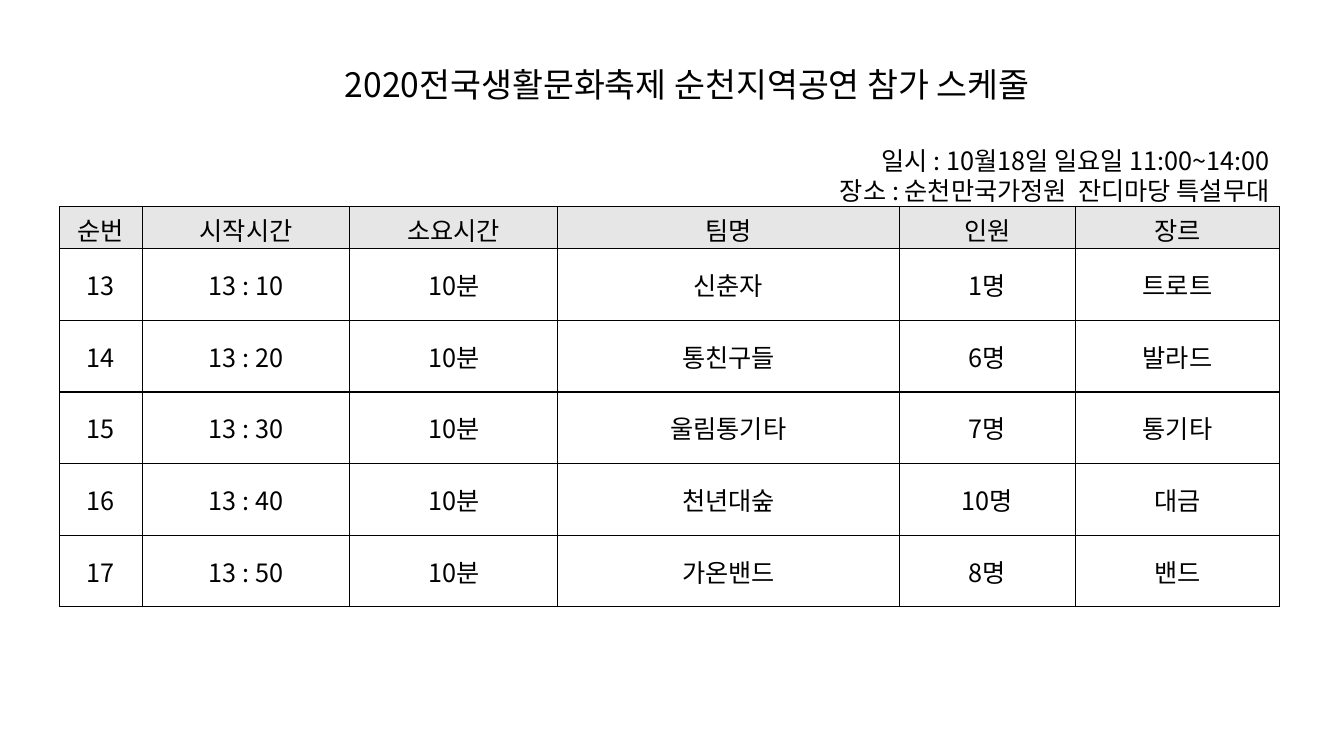
from dataclasses import dataclass

from lxml.etree import SubElement
from pptx import Presentation
from pptx.dml.color import RGBColor
from pptx.enum.text import MSO_ANCHOR, MSO_AUTO_SIZE, PP_ALIGN
from pptx.oxml.ns import qn
from pptx.util import Emu, Inches, Pt

FONT = "Noto Sans CJK KR"
COLORS = {"ink": "000000", "header": "E7E6E6", "paper": "FFFFFF"}
SLIDE_WIDTH, SLIDE_HEIGHT = Inches(13.33), Inches(7.5)
COLUMN_SHARES = [6.15, 15.45, 15.45, 25.43, 13.13, 15.15]
HEADER_SHARE, ROW_SHARE = 5.6, 9.47
HEADINGS = ["순번", "시작시간", "소요시간", "팀명", "인원", "장르"]
DETAILS = ["일시 : 10월18일 일요일 11:00~14:00", "장소 : 순천만국가정원  잔디마당 특설무대"]
FIRST_NUMBER = 13


@dataclass(frozen=True)
class Area:
    left: float
    top: float
    width: float
    height: float

    def frame(self) -> tuple[Emu, Emu, Emu, Emu]:
        return across(self.left), down(self.top), across(self.width), down(self.height)


@dataclass(frozen=True)
class Team:
    name: str
    members: int
    genre: str


TEAMS = [
    Team("신춘자", 1, "트로트"),
    Team("통친구들", 6, "발라드"),
    Team("울림통기타", 7, "통기타"),
    Team("천년대숲", 10, "대금"),
    Team("가온밴드", 8, "밴드"),
]
TITLE_AREA = Area(21.23, 7.73, 59.79, 6.67)
DETAILS_AREA = Area(57.01, 18.53, 38.18, 9.47)
TABLE_AREA = Area(4.43, 27.33, sum(COLUMN_SHARES), HEADER_SHARE + ROW_SHARE * len(TEAMS))


def across(share: float) -> Emu:
    return Emu(round(SLIDE_WIDTH * share / 100))


def down(share: float) -> Emu:
    return Emu(round(SLIDE_HEIGHT * share / 100))


def write(text_frame, lines: list[str], size: int, alignment: PP_ALIGN) -> None:
    text_frame.text = "\n".join(lines)
    for paragraph in text_frame.paragraphs:
        paragraph.alignment = alignment
        paragraph.font.size = Pt(size)
        paragraph.font.color.rgb = RGBColor.from_string(COLORS["ink"])
        paragraph.font.name = FONT
        properties = paragraph._p.pPr.find(qn("a:defRPr"))
        SubElement(properties, qn("a:ea"), typeface=FONT)


def add_borders(cell) -> None:
    properties = cell._tc.get_or_add_tcPr()
    for position, side in enumerate(("lnL", "lnR", "lnT", "lnB")):
        line = properties.makeelement(qn(f"a:{side}"), {"w": str(Pt(1))})
        fill = SubElement(line, qn("a:solidFill"))
        SubElement(fill, qn("a:srgbClr"), val=COLORS["ink"])
        properties.insert(position, line)


def add_title(page) -> None:
    title = page.shapes.title
    title.left, title.top, title.width, title.height = TITLE_AREA.frame()
    write(title.text_frame, ["2020전국생활문화축제 순천지역공연 참가 스케줄"], 24, PP_ALIGN.CENTER)
    title.text_frame.vertical_anchor = MSO_ANCHOR.TOP
    title.text_frame.auto_size = MSO_AUTO_SIZE.SHAPE_TO_FIT_TEXT


def add_schedule(page) -> None:
    rows = [HEADINGS] + [
        [str(FIRST_NUMBER + index), f"13 : {10 * (index + 1)}", "10분", team.name, f"{team.members}명", team.genre]
        for index, team in enumerate(TEAMS)
    ]
    table = page.shapes.add_table(len(rows), len(HEADINGS), *TABLE_AREA.frame()).table
    table.first_row = table.horz_banding = False
    for column, share in zip(table.columns, COLUMN_SHARES):
        column.width = across(share)
    for row_index, texts in enumerate(rows):
        is_header = row_index == 0
        table.rows[row_index].height = down(HEADER_SHARE if is_header else ROW_SHARE)
        for column_index, text in enumerate(texts):
            cell = table.cell(row_index, column_index)
            write(cell.text_frame, [text], 18, PP_ALIGN.CENTER)
            cell.vertical_anchor = MSO_ANCHOR.TOP if is_header else MSO_ANCHOR.MIDDLE
            cell.fill.solid()
            cell.fill.fore_color.rgb = RGBColor.from_string(COLORS["header" if is_header else "paper"])
            add_borders(cell)


def add_details(page) -> None:
    box = page.shapes.add_textbox(*DETAILS_AREA.frame())
    box.text_frame.word_wrap = True
    box.text_frame.auto_size = MSO_AUTO_SIZE.SHAPE_TO_FIT_TEXT
    write(box.text_frame, DETAILS, 18, PP_ALIGN.RIGHT)


def main() -> None:
    deck = Presentation()
    deck.slide_width, deck.slide_height = SLIDE_WIDTH, SLIDE_HEIGHT
    page = deck.slides.add_slide(deck.slide_layouts.get_by_name("Title Only"))
    add_title(page)
    add_schedule(page)
    add_details(page)
    deck.save("out.pptx")


if __name__ == "__main__":
    main()
